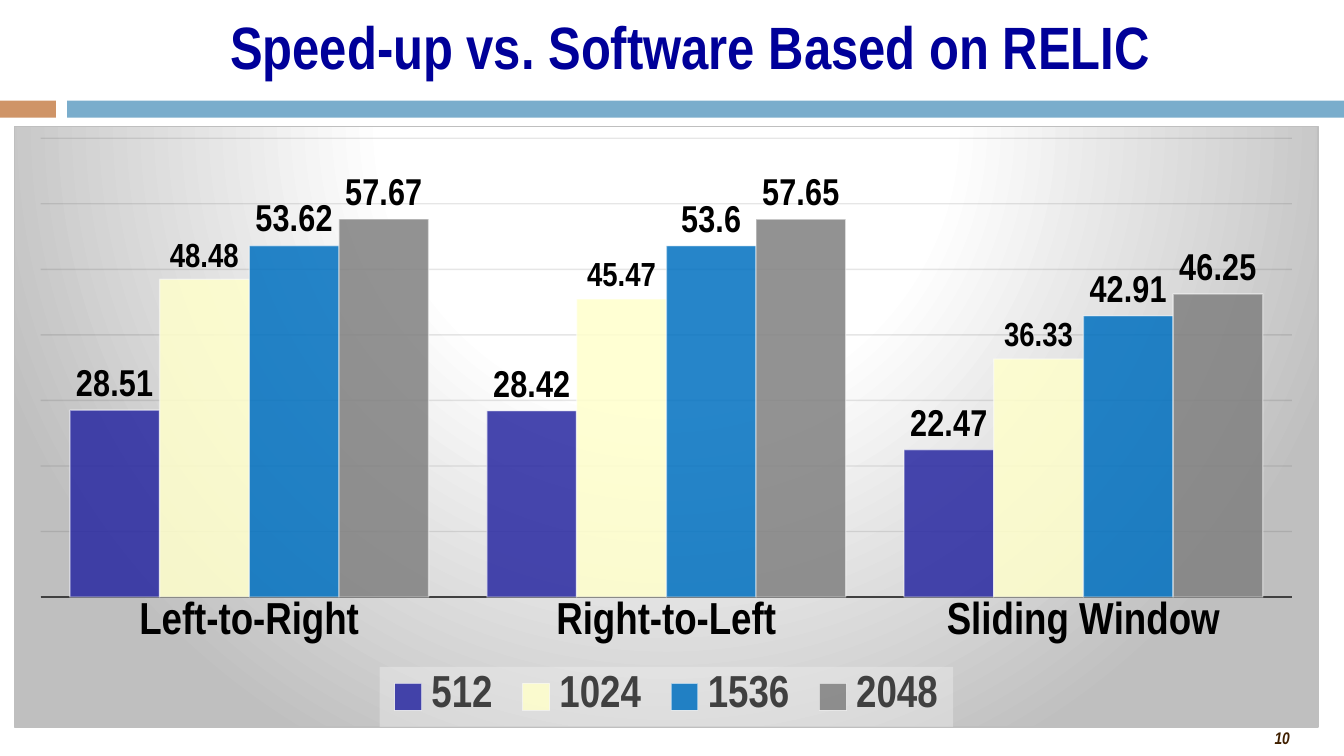
from lxml.etree import SubElement
from pptx import Presentation
from pptx.chart.data import CategoryChartData
from pptx.dml.color import RGBColor
from pptx.enum.chart import XL_CHART_TYPE, XL_LABEL_POSITION, XL_LEGEND_POSITION, XL_TICK_MARK
from pptx.enum.shapes import MSO_SHAPE
from pptx.enum.text import MSO_ANCHOR, PP_ALIGN
from pptx.oxml import parse_xml
from pptx.oxml.ns import nsdecls, qn
from pptx.util import Pt

FACE = "Arial Narrow"
CATS = ["Left-to-Right", "Right-to-Left", "Sliding Window"]
SERIES = [
    ("512", (28.51, 28.42, 22.47), "2828A1", 20),
    ("1024", (48.48, 45.47, 36.33), "FFFFCC", 18),
    ("1536", (53.62, 53.6, 42.91), "0070C0", 20),
    ("2048", (57.67, 57.65, 46.25), "808080", 20),
]


def paint(color, code):
    """Set a colour from a hex string."""
    color.rgb = RGBColor.from_string(code)


def style(font, size, code, bold=True):
    """Set the face, size, weight and colour of a font."""
    font.name, font.size, font.bold = FACE, Pt(size), bold
    paint(font.color, code)


def stroke(line, code, width=0.75):
    """Give a line its colour and width."""
    line.fill.solid()
    paint(line.color, code)
    line.width = Pt(width)


def fade(chart, query, share):
    """Make the colours found by a query partly transparent."""
    for node in chart.element.xpath(query):
        SubElement(node, qn("a:alpha")).set("val", str(share * 1000))


def arrange(node, spot, box, inner=False):
    """Place a chart part by fractions of the chart area."""
    for old in node.findall(qn("c:layout")):
        node.remove(old)
    target = '<c:layoutTarget val="inner"/>' if inner else ""
    modes = '<c:xMode val="edge"/><c:yMode val="edge"/>'
    sizes = "".join(f'<c:{key} val="{val}"/>' for key, val in zip("xywh", box))
    node.insert(spot, parse_xml(
        f'<c:layout {nsdecls("c")}><c:manualLayout>{target}{modes}{sizes}'
        "</c:manualLayout></c:layout>"))


def add_text(slide, box, text, size, code, align):
    """Add a text box with one line and return it."""
    frame = slide.shapes.add_textbox(*map(Pt, box)).text_frame
    frame.word_wrap = True
    frame.text = text
    para = frame.paragraphs[0]
    para.alignment = align
    style(para.runs[0].font, size, code)
    return frame


def add_head(slide, box):
    """Add the title above its two-part rule."""
    left, top, width, height = box
    frame = add_text(slide, (left + 40.3, top + 4.3, 659.5, 44.6),
                     "Speed-up vs. Software Based on RELIC", 32, "000099", PP_ALIGN.CENTER)
    frame.vertical_anchor = MSO_ANCHOR.MIDDLE
    frame.paragraphs[0].line_spacing = 0.94
    for start, end, code in ((0, 30, "CF9467"), (36, width, "7AADCC")):
        bar = slide.shapes.add_shape(MSO_SHAPE.RECTANGLE, Pt(left + start),
                                     Pt(top + height - 9), Pt(end - start), Pt(9))
        bar.shadow.inherit = False
        bar.fill.solid()
        paint(bar.fill.fore_color, code)
        bar.line.fill.background()


def add_ground(chart):
    """Give the chart area a radial gradient and a thin border."""
    stops = "".join(f'<a:gs pos="{pos}000"><a:srgbClr val="{code}"/></a:gs>'
                    for pos, code in ((0, "FFFFFF"), (39, "FFFFFF"), (100, "BFBFBF")))
    chart.element.find(qn("c:chart")).addnext(parse_xml(
        f'<c:spPr {nsdecls("c", "a")}><a:gradFill><a:gsLst>{stops}</a:gsLst>'
        '<a:path path="circle"><a:fillToRect l="50000" t="-80000" r="50000" b="180000"/>'
        '</a:path></a:gradFill><a:ln w="9525"><a:solidFill><a:srgbClr val="BFBFBF"/>'
        "</a:solidFill></a:ln></c:spPr>"))


def add_legend(chart):
    """Add a pale legend along the bottom."""
    chart.has_legend = True
    legend = chart.legend
    legend.position = XL_LEGEND_POSITION.BOTTOM
    legend.include_in_layout = False
    style(legend.font, 24, "404040")
    node = chart.element.xpath(".//c:legend")[0]
    arrange(node, 1, (0.28, 0.9, 0.44, 0.1))
    node.find(qn("c:txPr")).addprevious(parse_xml(
        f'<c:spPr {nsdecls("c", "a")}><a:solidFill><a:srgbClr val="F2F2F2">'
        '<a:alpha val="39000"/></a:srgbClr></a:solidFill></c:spPr>'))


def add_bars(slide, box):
    """Add the clustered column chart."""
    data = CategoryChartData()
    data.categories = CATS
    for name, vals, _, _ in SERIES:
        data.add_series(name, vals)
    chart = slide.shapes.add_chart(XL_CHART_TYPE.COLUMN_CLUSTERED, *map(Pt, box), data).chart
    style(chart.font, 10, "000000", False)
    chart.has_title = False
    add_ground(chart)
    add_legend(chart)
    arrange(chart.element.xpath(".//c:plotArea")[0], 0, (0.02, 0.02, 0.96, 0.764), True)

    plot = chart.plots[0]
    plot.gap_width, plot.overlap, plot.vary_by_categories = 65, 0, False
    for series, (_, _, code, size) in zip(plot.series, SERIES):
        series.invert_if_negative = False
        series.format.fill.solid()
        paint(series.format.fill.fore_color, code)
        stroke(series.format.line, "FFFFFF")
        labels = series.data_labels
        labels.show_value = True
        labels.position = XL_LABEL_POSITION.OUTSIDE_END
        style(labels.font, size, "000000")
    fade(chart, ".//c:ser/c:spPr/a:solidFill/a:srgbClr", 85)
    fade(chart, ".//c:ser/c:spPr/a:ln/a:solidFill/a:srgbClr", 50)

    cats, vals = chart.category_axis, chart.value_axis
    cats.major_tick_mark = cats.minor_tick_mark = XL_TICK_MARK.NONE
    style(cats.tick_labels.font, 24, "000000")
    stroke(cats.format.line, "404040", 1.5)
    vals.minimum_scale, vals.maximum_scale, vals.major_unit = 0, 70, 10
    vals.has_major_gridlines = True
    stroke(vals.major_gridlines.format.line, "0D0D0D")
    fade(chart, ".//c:majorGridlines//a:srgbClr", 10)
    vals.visible = False


def add_foot(slide, box):
    """Add the slide number."""
    frame = add_text(slide, box, "10", 9, "402000", PP_ALIGN.RIGHT)
    frame.margin_left = frame.margin_right = Pt(5)
    frame.margin_top = frame.margin_bottom = Pt(2.5)
    frame.paragraphs[0].runs[0].font.italic = True


def main():
    """Build the slide and save it."""
    deck = Presentation()
    deck.slide_width, deck.slide_height = Pt(720), Pt(405)
    slide = deck.slides.add_slide(deck.slide_layouts[6])
    add_foot(slide, (540, 387.5, 156, 16.5))
    add_head(slide, (0, 0, 720, 63))
    add_bars(slide, (7.5, 67.3, 699, 322.5))
    deck.save("out.pptx")


if __name__ == "__main__":
    main()
